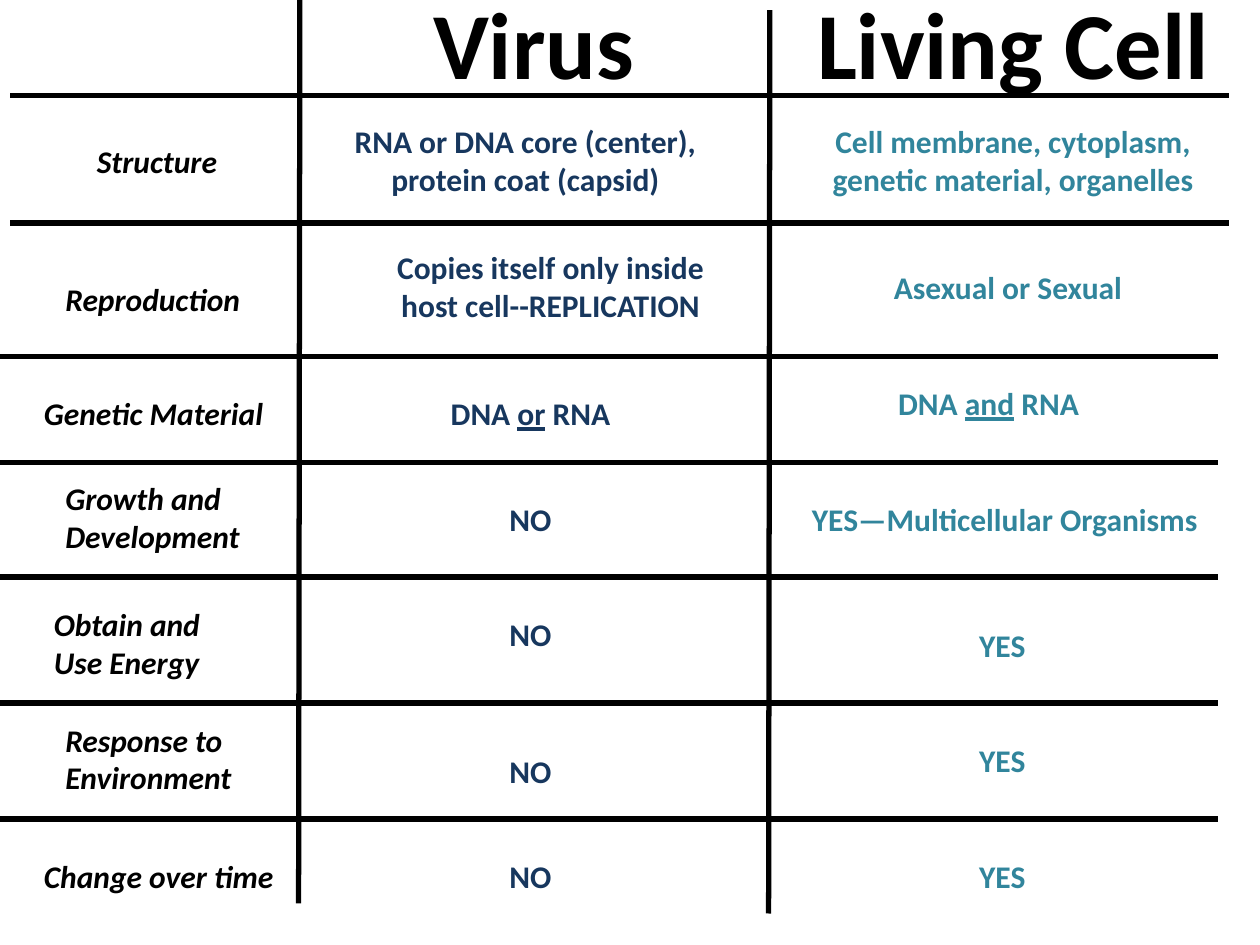
"""Build a slide that compares viruses with living cells."""
from dataclasses import dataclass

from lxml import etree
from pptx import Presentation
from pptx.dml.color import RGBColor
from pptx.enum import shapes, text
from pptx.oxml import ns
from pptx.slide import Slide
from pptx.util import Inches, Pt


@dataclass(frozen=True)
class Theme:
    """Colours, font and sizes of the slide."""

    font: str = "Calibri"
    ink: str = "000000"
    virus: str = "17375E"
    cell: str = "31859C"
    heading: int = 54
    body: int = 18
    rule: int = 3


@dataclass(frozen=True)
class Style:
    """Look shared by the entries of one column."""

    color: str
    size: int
    align: text.PP_ALIGN = text.PP_ALIGN.CENTER
    italic: bool = False


@dataclass(frozen=True)
class Entry:
    """Text with its box; underscores enclose underlined words."""

    words: str
    left: float
    top: float
    width: float
    height: float = 0.4
    wrap: bool = True


@dataclass(frozen=True)
class Rule:
    """Straight line between two points."""

    x1: float
    y1: float
    x2: float
    y2: float


THEME = Theme()
HEADING = Style(THEME.ink, THEME.heading)
VIRUS = Style(THEME.virus, THEME.body)
CELL = Style(THEME.cell, THEME.body)
TRAIT = Style(THEME.ink, THEME.body, text.PP_ALIGN.LEFT, True)

RULES = [
    *(Rule(0.08, y, 9.75, y) for y in (0.76, 1.77)),
    *(Rule(0, y, 9.67, y) for y in (2.83, 3.67, 4.58, 5.58, 6.5)),
    Rule(6.1, 7.25, 6.11, 0.08),
    Rule(2.37, 7.17, 2.38, 0),
]

COLUMNS = [
    (HEADING, [
        Entry("Virus", 3.33, -0.17, 1.81, 1.01),
        Entry("Living Cell", 6.33, -0.17, 3.42, 1.01),
    ]),
    (VIRUS, [
        Entry("RNA or DNA core (center), protein coat (capsid)", 2.67, 0.92, 3, 0.71),
        Entry("Copies itself only inside host cell--REPLICATION", 2.83, 1.92, 3.08, 0.71),
        Entry("DNA _or_ RNA", 2.67, 3.08, 3.08),
        *(Entry("NO", 2.67, y, 3.08) for y in (3.92, 4.83, 5.92, 6.75)),
    ]),
    (CELL, [
        Entry("Cell membrane, cytoplasm, genetic material, organelles", 6.33, 0.92, 3.42, 0.71),
        Entry("Asexual or Sexual", 6.25, 2.08, 3.5, 0.42),
        Entry("DNA _and_ RNA", 7.02, 3, 1.65, wrap=False),
        Entry("YES—Multicellular Organisms", 6.33, 3.92, 3.29, wrap=False),
        *(Entry("YES", 7.67, y, 0.57, wrap=False) for y in (4.92, 5.83, 6.75)),
    ]),
    (TRAIT, [
        Entry("Structure", 0.67, 1.08, 1.17, wrap=False),
        Entry("Reproduction", 0.42, 2.17, 1.61, wrap=False),
        Entry("Genetic Material", 0.25, 3.08, 1.96, wrap=False),
        Entry("Growth and Development", 0.42, 3.75, 1.75, 0.71),
        Entry("Obtain and Use Energy", 0.33, 4.75, 1.67, 0.71),
        Entry("Response to Environment", 0.42, 5.67, 1.67, 0.71),
        Entry("Change over time", 0.25, 6.75, 2.05, wrap=False),
    ]),
]


def draw_rule(s: Slide, rule: Rule) -> None:
    """Draw one line of the grid."""
    ends = [Inches(v) for v in (rule.x1, rule.y1, rule.x2, rule.y2)]
    line = s.shapes.add_connector(shapes.MSO_CONNECTOR.STRAIGHT, *ends)
    line.line.color.rgb = RGBColor.from_string(THEME.ink)
    line.line.width = Pt(THEME.rule)
    etree.SubElement(line._element.spPr, ns.qn("a:effectLst"))


def draw_entry(s: Slide, entry: Entry, style: Style) -> None:
    """Draw one text box in the style of its column."""
    box = [Inches(v) for v in (entry.left, entry.top, entry.width, entry.height)]
    tf = s.shapes.add_textbox(*box).text_frame
    tf.word_wrap = entry.wrap
    tf.auto_size = text.MSO_AUTO_SIZE.SHAPE_TO_FIT_TEXT
    p = tf.paragraphs[0]
    p.alignment = style.align
    for i, part in enumerate(entry.words.split("_")):
        r = p.add_run()
        r.text = part
        r.font.name = THEME.font
        r.font.size = Pt(style.size)
        r.font.bold = True
        r.font.italic = style.italic
        r.font.underline = i % 2 == 1
        r.font.color.rgb = RGBColor.from_string(style.color)


def main() -> None:
    """Build and save the slide."""
    prs = Presentation()
    prs.slide_width, prs.slide_height = Inches(10), Inches(7.5)
    s = prs.slides.add_slide(prs.slide_layouts[6])
    for rule in RULES:
        draw_rule(s, rule)
    for style, entries in COLUMNS:
        for entry in entries:
            draw_entry(s, entry, style)
    prs.save("out.pptx")


if __name__ == "__main__":
    main()
